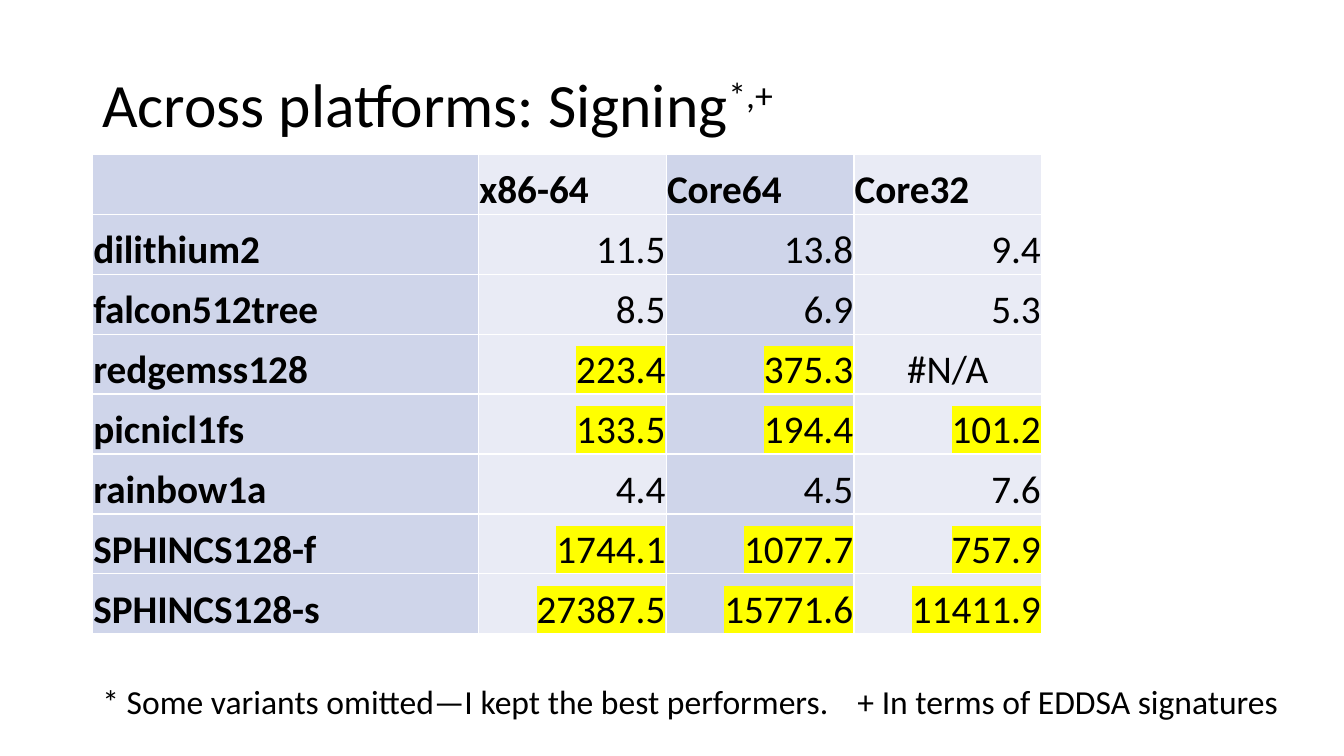
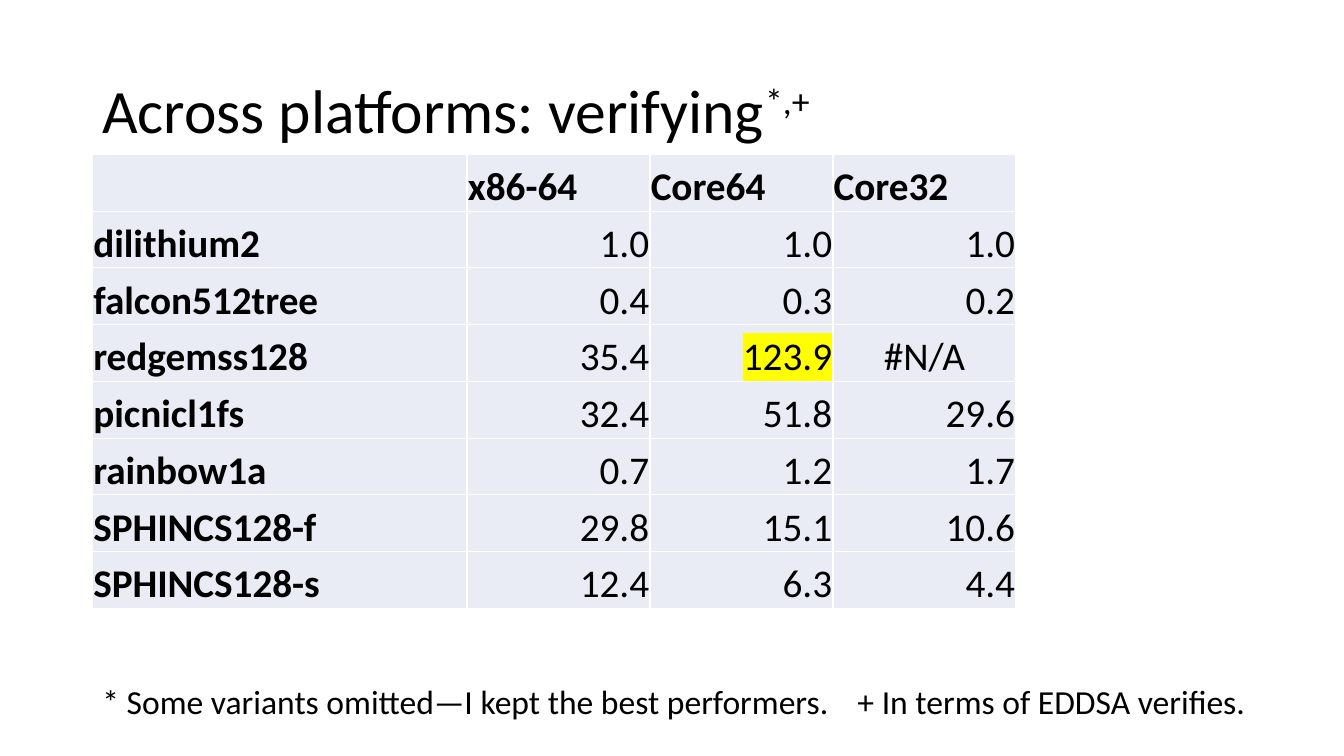
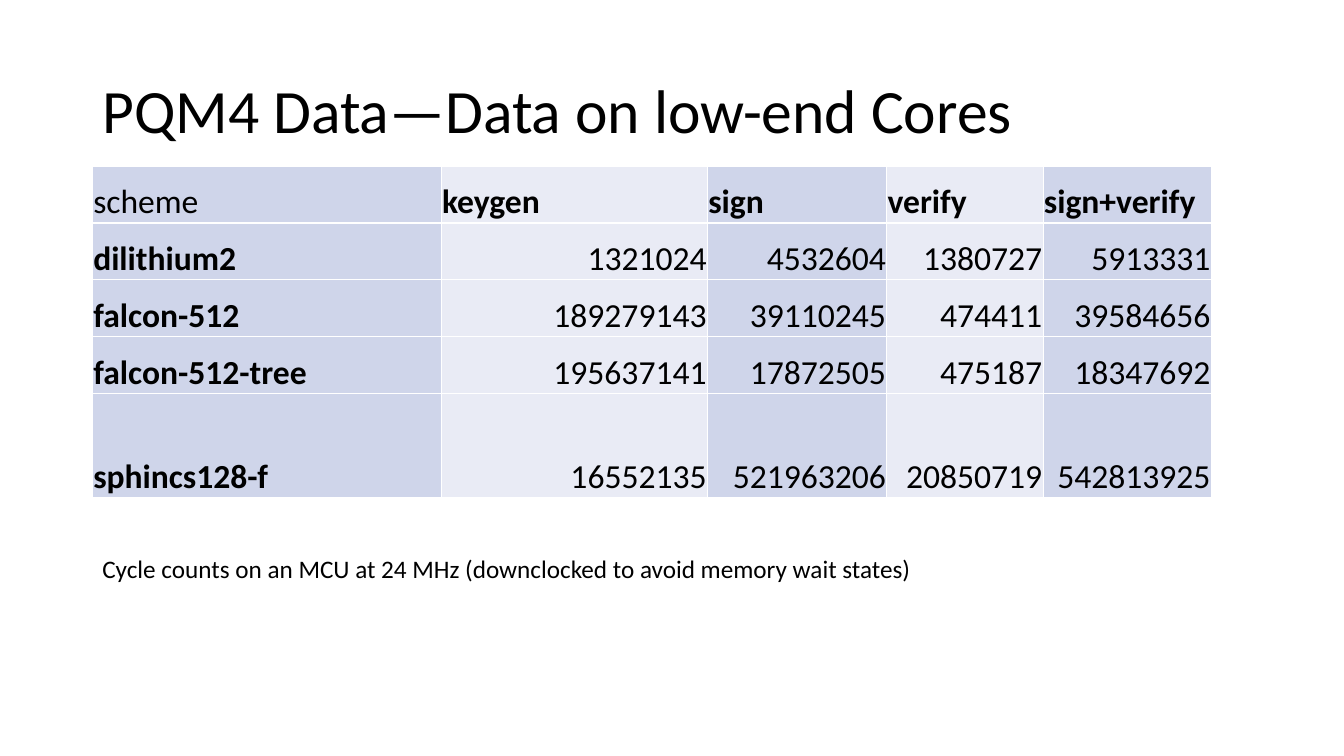
from lxml.etree import SubElement
from pptx import Presentation
from pptx.dml.color import RGBColor
from pptx.enum.text import MSO_ANCHOR, PP_ALIGN
from pptx.oxml import parse_xml
from pptx.oxml.ns import nsdecls, qn
from pptx.util import Cm, Pt

BLACK = RGBColor(0x00, 0x00, 0x00)
WHITE = RGBColor(0xFF, 0xFF, 0xFF)
YELLOW = RGBColor(0xFF, 0xFF, 0x00)
DARK_BAND = RGBColor(0xCF, 0xD5, 0xEA)
LIGHT_BAND = RGBColor(0xE9, 0xEB, 0xF5)

FONT = "Calibri"
LEFT = 2.33
SLOW_FACTOR = 100
MISSING = "#N/A"
FOOTNOTE_TAB = 19.03
FOOTNOTE_START = "* Some variants omitted—I kept the best performers."

PLATFORMS = ["", "x86-64", "Core64", "Core32"]
SIGNING = [
    PLATFORMS,
    ["dilithium2", "11.5", "13.8", "9.4"],
    ["falcon512tree", "8.5", "6.9", "5.3"],
    ["redgemss128", "223.4", "375.3", MISSING],
    ["picnicl1fs", "133.5", "194.4", "101.2"],
    ["rainbow1a", "4.4", "4.5", "7.6"],
    ["SPHINCS128-f", "1744.1", "1077.7", "757.9"],
    ["SPHINCS128-s", "27387.5", "15771.6", "11411.9"],
]
VERIFYING = [
    PLATFORMS,
    ["dilithium2", "1.0", "1.0", "1.0"],
    ["falcon512tree", "0.4", "0.3", "0.2"],
    ["redgemss128", "35.4", "123.9", MISSING],
    ["picnicl1fs", "32.4", "51.8", "29.6"],
    ["rainbow1a", "0.7", "1.2", "1.7"],
    ["SPHINCS128-f", "29.8", "15.1", "10.6"],
    ["SPHINCS128-s", "12.4", "6.3", "4.4"],
]
CYCLES = [
    ["scheme", "keygen", "sign", "verify", "sign+verify"],
    ["dilithium2", "1321024", "4532604", "1380727", "5913331"],
    ["falcon-512", "189279143", "39110245", "474411", "39584656"],
    ["falcon-512-tree", "195637141", "17872505", "475187", "18347692"],
    ["sphincs128-f", "16552135", "521963206", "20850719", "542813925"],
]


def write_text(paragraph, text, size, bold=False, align=PP_ALIGN.LEFT,
               highlight=None, superscript=False):
    """Append one formatted run to the paragraph."""
    paragraph.alignment = align
    run = paragraph.add_run()
    run.text = text
    run.font.size = Pt(size)
    run.font.bold = bold
    run.font.color.rgb = BLACK
    if highlight is not None:
        mark = SubElement(run._r.get_or_add_rPr(), qn("a:highlight"))
        SubElement(mark, qn("a:srgbClr")).set("val", str(highlight))
    run.font.name = FONT
    if superscript:
        run._r.get_or_add_rPr().set("baseline", "30000")


def add_text_box(slide, top, width, height, anchor=MSO_ANCHOR.TOP):
    """Add an empty box at the common left edge and return its paragraph."""
    box = slide.shapes.add_textbox(Cm(LEFT), Cm(top), Cm(width), Cm(height))
    box.text_frame.word_wrap = True
    box.text_frame.vertical_anchor = anchor
    return box.text_frame.paragraphs[0]


def add_title(slide, text, top=1.02, marks=""):
    paragraph = add_text_box(slide, top, 29.21, 3.68, MSO_ANCHOR.MIDDLE)
    paragraph.line_spacing = 0.9
    write_text(paragraph, text, 44)
    if marks:
        write_text(paragraph, marks, 44, superscript=True)


def add_footnote(slide, unit):
    paragraph = add_text_box(slide, 17.04, 30.6, 1.27)
    tabs = SubElement(paragraph._p.get_or_add_pPr(), qn("a:tabLst"))
    stop = SubElement(tabs, qn("a:tab"))
    stop.set("pos", str(Cm(FOOTNOTE_TAB)))
    stop.set("algn", "l")
    write_text(paragraph, f"{FOOTNOTE_START}\t+ In terms of EDDSA {unit}", 24)


def style_cell(cell, fill):
    cell.fill.solid()
    cell.fill.fore_color.rgb = fill
    cell.vertical_anchor = MSO_ANCHOR.BOTTOM
    cell.margin_left = cell.margin_right = cell.margin_top = Cm(0.02)
    cell.margin_bottom = 0
    properties = cell._tc.get_or_add_tcPr()
    for position, side in enumerate(("lnL", "lnR", "lnT", "lnB")):
        properties.insert(position, parse_xml(
            f'<a:{side} {nsdecls("a")} w="{Pt(1)}"><a:solidFill>'
            f'<a:srgbClr val="{WHITE}"/></a:solidFill></a:{side}>'))


def value_format(text, mark_slow):
    """Return alignment and highlight for a cell that holds a value."""
    if text == MISSING:
        return {"align": PP_ALIGN.CENTER}
    slow = mark_slow and float(text) > SLOW_FACTOR
    return {"align": PP_ALIGN.RIGHT, "highlight": YELLOW if slow else None}


def add_data_table(slide, data, top, widths, heights, size,
                   bands=(DARK_BAND, LIGHT_BAND), mark_slow=True):
    frame = slide.shapes.add_table(
        len(data), len(widths), Cm(LEFT), Cm(top),
        Cm(sum(widths)), Cm(sum(heights)))
    table = frame.table
    table.first_row = table.horz_banding = False
    for column, width in zip(table.columns, widths):
        column.width = Cm(width)
    for row, height in zip(table.rows, heights):
        row.height = Cm(height)
    for row_index, values in enumerate(data):
        for column_index, text in enumerate(values):
            cell = table.cell(row_index, column_index)
            style_cell(cell, bands[column_index % len(bands)])
            if not text:
                continue
            if row_index and column_index:
                text_format = value_format(text, mark_slow)
            else:
                text_format = {"bold": row_index + column_index > 0}
            write_text(cell.text_frame.paragraphs[0], text, size, **text_format)


def main():
    presentation = Presentation()
    presentation.slide_width = Cm(33.87)
    presentation.slide_height = Cm(19.05)
    blank = presentation.slide_layouts[6]

    slide = presentation.slides.add_slide(blank)
    add_title(slide, "Across platforms: Signing", top=0.86, marks="*,+")
    add_data_table(slide, SIGNING, 3.89, [9.73] + [4.73] * 3,
                   [1.51] * len(SIGNING), 28)
    add_footnote(slide, "signatures")

    slide = presentation.slides.add_slide(blank)
    add_title(slide, "Across platforms: verifying", marks="*,+")
    add_data_table(slide, VERIFYING, 3.89, [9.44] + [4.61] * 3,
                   [1.43] * len(VERIFYING), 28, bands=(LIGHT_BAND,))
    add_footnote(slide, "verifies.")

    slide = presentation.slides.add_slide(blank)
    add_title(slide, "PQM4 Data—Data on low-end Cores")
    add_data_table(slide, CYCLES, 4.19, [8.79, 6.71, 4.52, 3.94, 4.24],
                   [1.43] * 4 + [2.64], 24, mark_slow=False)
    caption = add_text_box(slide, 13.82, 26.8, 1.02)
    write_text(caption, "Cycle counts on an MCU at 24 MHz "
               "(downclocked to avoid memory wait states)", 18)

    presentation.save("out.pptx")


if __name__ == "__main__":
    main()
